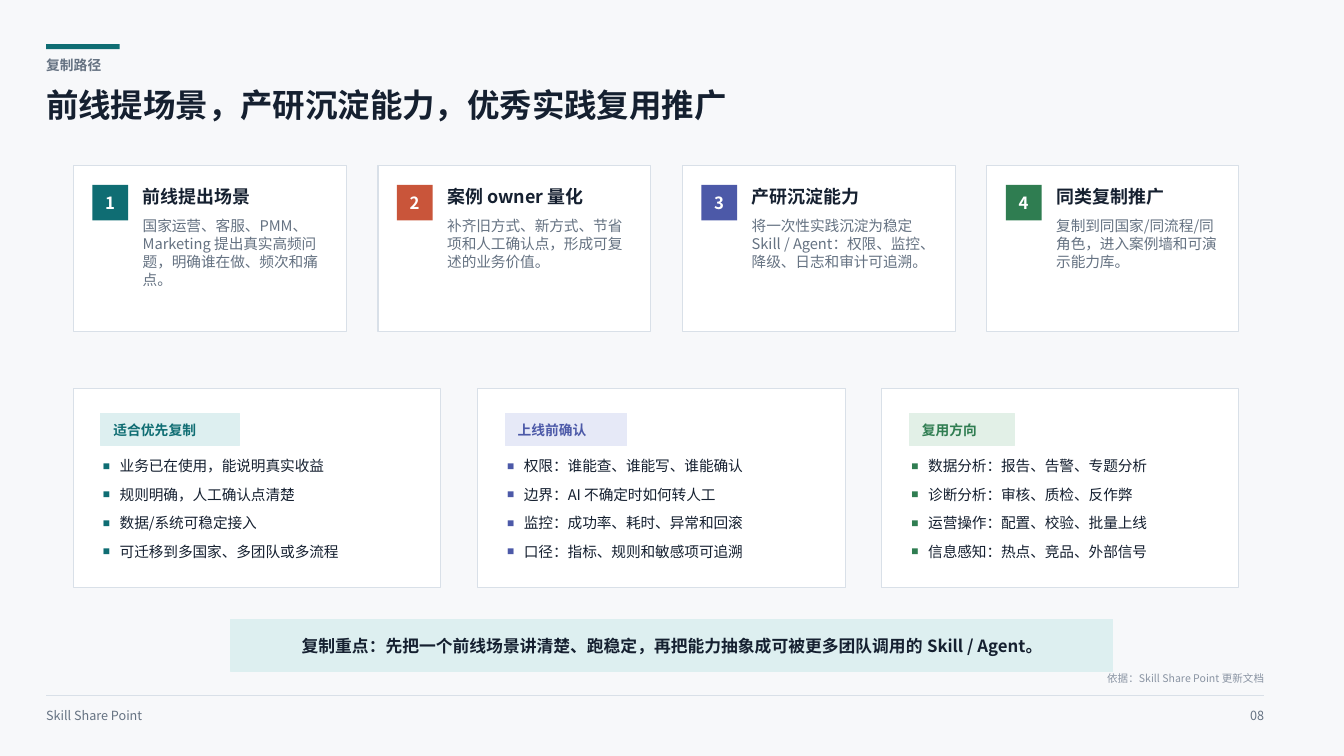
from lxml import etree
from pptx import Presentation
from pptx.dml.color import RGBColor
from pptx.enum.shapes import MSO_CONNECTOR, MSO_SHAPE
from pptx.enum.text import MSO_ANCHOR, MSO_AUTO_SIZE, PP_ALIGN
from pptx.oxml.ns import qn
from pptx.util import Inches, Pt

RECT, STRAIGHT = MSO_SHAPE.RECTANGLE, MSO_CONNECTOR.STRAIGHT
TOP, MIDDLE = MSO_ANCHOR.TOP, MSO_ANCHOR.MIDDLE
LEFT, CENTER, RIGHT = PP_ALIGN.LEFT, PP_ALIGN.CENTER, PP_ALIGN.RIGHT
FIXED = MSO_AUTO_SIZE.NONE

FONT = "Noto Sans CJK SC"
COLS, ROWS = 1280, 720
CELL = Inches(7.5) / ROWS
EDGE, INSET = 44, 70
LEADING = 1.22

HUES = {
    "page": "F7F8FA", "white": "FFFFFF", "rule": "D9E0E8",
    "ink": "152030", "gray": "657282", "faint": "8A94A3",
    "teal": "0F6D73", "rust": "C9553A", "blue": "4C59A8", "green": "2F7D51",
    "teal_pale": "DDEFF0", "blue_pale": "E6E9F7", "green_pale": "E2F0E7",
}

STEPS = [
    ("teal", "前线提出场景", "国家运营、客服、PMM、Marketing 提出真实高频问题，明确谁在做、频次和痛点。"),
    ("rust", "案例 owner 量化", "补齐旧方式、新方式、节省项和人工确认点，形成可复述的业务价值。"),
    ("blue", "产研沉淀能力", "将一次性实践沉淀为稳定 Skill / Agent：权限、监控、降级、日志和审计可追溯。"),
    ("green", "同类复制推广", "复制到同国家/同流程/同角色，进入案例墙和可演示能力库。"),
]

PANELS = [
    ("teal", "适合优先复制", [
        "业务已在使用，能说明真实收益", "规则明确，人工确认点清楚",
        "数据/系统可稳定接入", "可迁移到多国家、多团队或多流程"]),
    ("blue", "上线前确认", [
        "权限：谁能查、谁能写、谁能确认", "边界：AI 不确定时如何转人工",
        "监控：成功率、耗时、异常和回滚", "口径：指标、规则和敏感项可追溯"]),
    ("green", "复用方向", [
        "数据分析：报告、告警、专题分析", "诊断分析：审核、质检、反作弊",
        "运营操作：配置、校验、批量上线", "信息感知：热点、竞品、外部信号"]),
]


def hue(name):
    """Return the named colour."""
    return RGBColor.from_string(HUES[name])


def span(*cells):
    """Turn grid cells into slide lengths."""
    return [round(cell * CELL) for cell in cells]


def mark(para, color, indent):
    """Give a paragraph a small square bullet."""
    props = para._p.get_or_add_pPr()
    props.set("marL", str(indent))
    props.set("indent", str(-indent))
    tint = etree.SubElement(props, qn("a:buClr"))
    etree.SubElement(tint, qn("a:srgbClr"), val=HUES[color])
    etree.SubElement(props, qn("a:buSzPct"), val="50000")
    etree.SubElement(props, qn("a:buFont"), typeface=FONT)
    etree.SubElement(props, qn("a:buChar"), char="■")


def write(shape, text, size=10.5, color="ink", bold=False, align=LEFT,
          anchor=TOP, pad=0, bullet=None, gap=0):
    """Fill a shape with text, one paragraph per line."""
    frame = shape.text_frame
    frame.word_wrap, frame.auto_size = True, FIXED
    frame.vertical_anchor = anchor
    frame.margin_left = round(pad * CELL)
    frame.margin_top = frame.margin_right = frame.margin_bottom = 0
    for order, line in enumerate(text.split("\n")):
        para = frame.add_paragraph() if order else frame.paragraphs[0]
        if bullet:
            mark(para, bullet, round(16 * CELL))
        para.alignment = align
        para.line_spacing = Pt(round(size * LEADING, 1))
        para.space_before = Pt(gap if order else 0)
        run = para.add_run()
        run.text = line
        font = run.font
        font.name, font.size, font.bold = FONT, Pt(size), bold
        font.color.rgb = hue(color)
        latin = run._r.rPr.find(qn("a:latin"))
        latin.addnext(latin.makeelement(qn("a:ea"), {"typeface": FONT}))


def label(slide, area, text, **style):
    """Add a text box on the grid."""
    write(slide.shapes.add_textbox(*span(*area)), text, **style)


def block(slide, area, fill, line=None):
    """Add a flat box on the grid."""
    box = slide.shapes.add_shape(RECT, *span(*area))
    box.shadow.inherit = False
    box.fill.solid()
    box.fill.fore_color.rgb = hue(fill)
    if line:
        box.line.color.rgb = hue(line)
        box.line.width = Pt(0.75)
    else:
        box.line.fill.background()
    return box


def rule(slide, left, right, top):
    """Draw a thin level line."""
    line = slide.shapes.add_connector(STRAIGHT, *span(left, top, right, top))
    line.line.color.rgb = hue("rule")
    line.line.width = Pt(0.75)
    etree.SubElement(line._element.spPr, qn("a:effectLst"))


def step(slide, order, color, head, body):
    """Add one numbered step card."""
    left, top = INSET + 290 * order, 158
    wide = 240 if order == len(STEPS) - 1 else 260
    block(slide, (left, top, wide, 158), "white", "rule")
    badge = block(slide, (left + 18, top + 18, 34, 34), color)
    write(badge, str(order + 1), size=12, color="white", bold=True,
          align=CENTER, anchor=MIDDLE)
    label(slide, (left + 66, top + 18, wide - 82, 24), head, size=12.8, bold=True)
    label(slide, (left + 66, top + 48, wide - 82, 92), body, color="gray")


def panel(slide, order, color, head, items):
    """Add one panel with a tag and a list."""
    left, top = INSET + 385 * order, 370
    wide = 340 if order == len(PANELS) - 1 else 350
    block(slide, (left, top, wide, 190), "white", "rule")
    pale = color + "_pale"
    tag = block(slide, (left + 26, top + 24, 36 + 16 * len(head), 30), pale, pale)
    write(tag, head, size=9.8, color=color, bold=True, anchor=MIDDLE, pad=12)
    label(slide, (left + 28, top + 65, wide - 64, 104), "\n".join(items),
          bullet=color, gap=7.6)


def header(slide):
    """Add the accent bar, topic and title."""
    block(slide, (EDGE, 42, 70, 5), "teal")
    label(slide, (EDGE, 54, 360, 24), "复制路径", size=9.8, color="gray", bold=True)
    title = slide.shapes.title
    title.left, title.top, title.width, title.height = span(EDGE, 80, 960, 48)
    write(title, "前线提场景，产研沉淀能力，优秀实践复用推广", size=23.2, bold=True)


def footer(slide):
    """Add the key message, basis and page line."""
    bar = block(slide, (220, 590, 840, 50), "teal_pale", "teal_pale")
    write(bar, "复制重点：先把一个前线场景讲清楚、跑稳定，再把能力抽象成可被更多团队调用的 Skill / Agent。",
          size=12, bold=True, align=CENTER, anchor=MIDDLE)
    end = COLS - 76
    label(slide, (end - 384, 640, 384, 16), "依据：Skill Share Point 更新文档",
          size=7.5, color="faint", align=RIGHT)
    rule(slide, EDGE, end, 662.5)
    label(slide, (EDGE, 674, 250, 18), "Skill Share Point", size=9, color="gray")
    label(slide, (end - 44, 674, 44, 18), "08", size=9, color="gray", align=RIGHT)


def main():
    """Build and save the slide."""
    deck = Presentation()
    deck.slide_width, deck.slide_height = span(COLS, ROWS)
    slide = deck.slides.add_slide(deck.slide_layouts[5])
    slide.background.fill.solid()
    slide.background.fill.fore_color.rgb = hue("page")
    header(slide)
    for order, item in enumerate(STEPS):
        step(slide, order, *item)
    for order, item in enumerate(PANELS):
        panel(slide, order, *item)
    footer(slide)
    deck.save("out.pptx")


if __name__ == "__main__":
    main()
